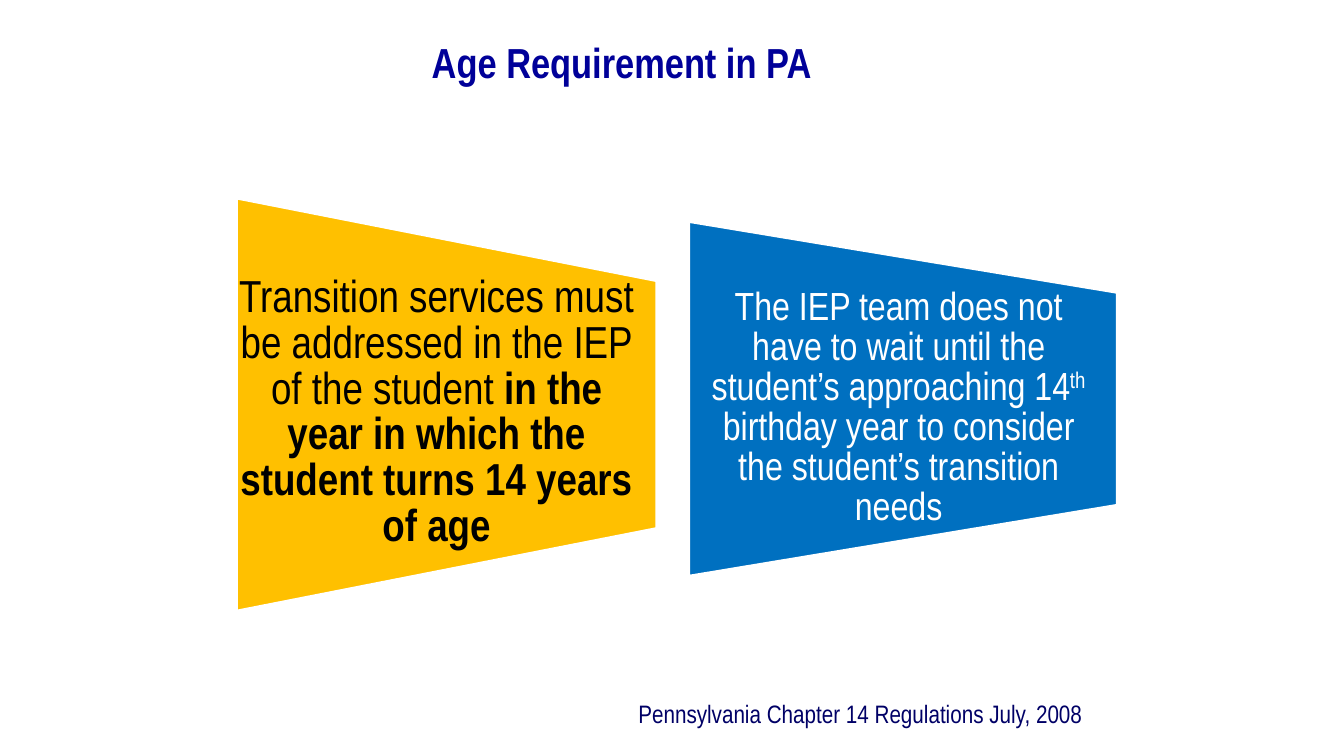
from pptx import Presentation
from pptx.dml.color import RGBColor
from pptx.enum.shapes import MSO_SHAPE
from pptx.enum.text import MSO_ANCHOR, PP_ALIGN
from pptx.util import Cm, Pt

NAVY = RGBColor(0x00, 0x00, 0x99)
DARK = RGBColor(0x00, 0x00, 0x66)
GOLD = RGBColor(0xFF, 0xC0, 0x00)
BLUE = RGBColor(0x00, 0x70, 0xC0)
BLACK = RGBColor(0x00, 0x00, 0x00)
WHITE = RGBColor(0xFF, 0xFF, 0xFF)
FACE = "Arial Narrow"

TITLE = "Age Requirement in PA"
SOURCE = "Pennsylvania Chapter 14 Regulations July, 2008"

# Boxes are left, top, width, height in cm; runs are (text, style)
PANELS = [
    {"fill": GOLD, "ink": BLACK, "size": 32,
     "shape": (6.05, 4.9, 10.41, 10.59), "text": (5.72, 8.61, 10.57, 3.61),
     "runs": [("Transition services must be addressed in the IEP of the student ", ""),
              ("in the year in which the student turns 14 years of age", "bold")]},
    {"fill": BLUE, "ink": WHITE, "size": 28,
     "shape": (18.29, 4.65, 8.94, 10.8), "text": (17.35, 8.38, 10.59, 3.81),
     "runs": [("The IEP team does not have to wait until the student’s approaching 14", ""),
              ("th", "super"),
              (" birthday year to consider the student’s transition needs", "")]},
]


def place(box):
    return [Cm(n) for n in box]


def format_text(para, size, color, align, space=1.0):
    para.alignment = align
    para.line_spacing = space
    para.font.name = FACE
    para.font.size = Pt(size)
    para.font.color.rgb = color


def add_text(slide, box, runs, anchor):
    """Add a wrapping text box and return its one paragraph."""
    frame = slide.shapes.add_textbox(*place(box)).text_frame
    frame.word_wrap = True
    frame.vertical_anchor = anchor
    para = frame.paragraphs[0]
    for text, style in runs:
        run = para.add_run()
        run.text = text
        if style == "bold":
            run.font.bold = True
        elif style == "super":
            run._r.get_or_add_rPr().set("baseline", "30000")
    return para


def add_panel(slide, panel):
    shape = slide.shapes.add_shape(
        MSO_SHAPE.FLOWCHART_MANUAL_OPERATION, *place(panel["shape"]))
    shape.rotation = 270
    shape.shadow.inherit = False
    shape.fill.solid()
    shape.fill.fore_color.rgb = panel["fill"]
    shape.line.color.rgb = WHITE
    shape.line.width = Pt(2)
    para = add_text(slide, panel["text"], panel["runs"], MSO_ANCHOR.MIDDLE)
    format_text(para, panel["size"], panel["ink"], PP_ALIGN.CENTER, 0.85)


def main():
    deck = Presentation()
    deck.slide_width, deck.slide_height = Cm(33.87), Cm(19.05)
    slide = deck.slides.add_slide(deck.slide_layouts[5])

    title = slide.shapes.title
    title.left, title.top, title.width, title.height = place((4.24, 0.84, 22.86, 1.57))
    title.text_frame.text = TITLE
    title.text_frame.vertical_anchor = MSO_ANCHOR.MIDDLE
    head = title.text_frame.paragraphs[0]
    format_text(head, 30, NAVY, PP_ALIGN.CENTER, 0.9)
    head.font.bold = True

    for panel in PANELS:
        add_panel(slide, panel)

    foot = add_text(slide, (5.51, 17.48, 22.02, 1.02), [(SOURCE, "")], MSO_ANCHOR.TOP)
    format_text(foot, 18, DARK, PP_ALIGN.RIGHT)
    deck.save("out.pptx")


if __name__ == "__main__":
    main()
